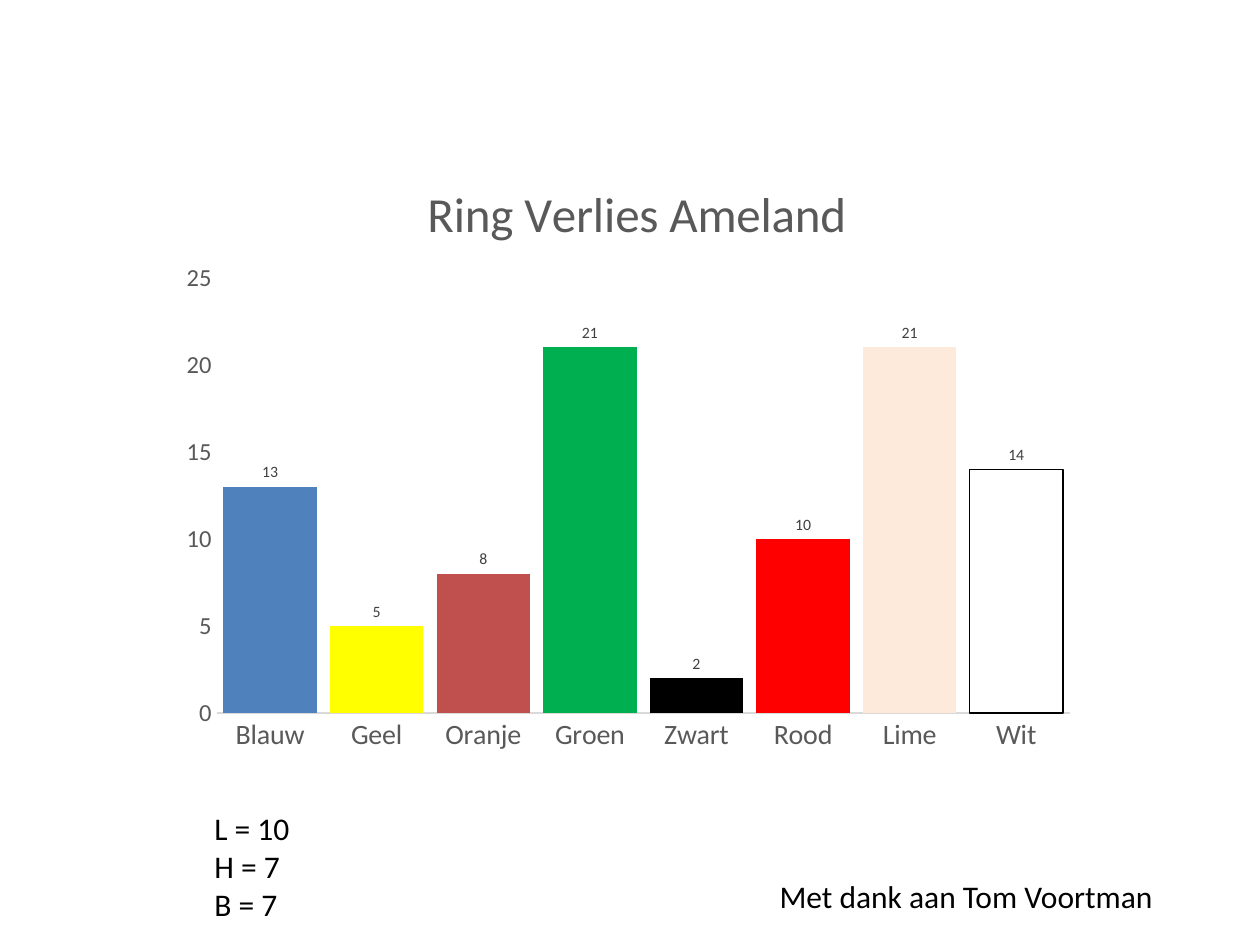
import pptx
import pptx.chart.data
import pptx.dml.color
import pptx.enum.chart
import pptx.enum.text
import pptx.oxml
import pptx.oxml.ns
import pptx.util

PX = pptx.util.Inches(1) / 126
FACE = "Calibri"
HUES = {
    "ink": "000000", "grey": "595959", "label": "404040", "axis": "D9D9D9",
    "Blauw": "4F81BD", "Geel": "FFFF00", "Oranje": "C0504D", "Groen": "00B050",
    "Zwart": "000000", "Rood": "FF0000", "Lime": "FDEADA", "Wit": "FFFFFF",
}
LOSS = {"Blauw": 13, "Geel": 5, "Oranje": 8, "Groen": 21,
        "Zwart": 2, "Rood": 10, "Lime": 21, "Wit": 14}
RGB = pptx.dml.color.RGBColor.from_string

deck = pptx.Presentation()
deck.slide_width = pptx.util.Inches(10)
deck.slide_height = pptx.util.Inches(7.5)
slide = deck.slides.add_slide(deck.slide_layouts[6])


def write(lines, box, size=18, hue="ink", align="LEFT"):
    """Add a text box with one paragraph per line; box is in px."""
    frame = slide.shapes.add_textbox(*[round(n * PX) for n in box]).text_frame
    frame.word_wrap = True
    frame.text = "\n".join(lines)
    for para in frame.paragraphs:
        para.alignment = getattr(pptx.enum.text.PP_ALIGN, align)
        style(para.font, size, hue)


def style(font, size, hue):
    font.name = FACE
    font.size = pptx.util.Pt(size)
    font.bold = False
    font.color.rgb = RGB(HUES[hue])


# Chart
data = pptx.chart.data.CategoryChartData()
data.categories = list(LOSS)
data.add_series("Series 1", list(LOSS.values()))
chart = slide.shapes.add_chart(
    pptx.enum.chart.XL_CHART_TYPE.COLUMN_CLUSTERED,
    *[round(n * PX) for n in (171, 141, 917, 622)], data).chart
style(chart.font, 10, "ink")
chart.has_legend = False
chart.has_title = True
title = chart.chart_title
title.text_frame.text = "Ring Verlies Ameland"
style(title.text_frame.paragraphs[0].runs[0].font, 28, "grey")

# Axes
for axis, size in ((chart.category_axis, 16), (chart.value_axis, 14)):
    style(axis.tick_labels.font, size, "grey")
    axis.major_tick_mark = pptx.enum.chart.XL_TICK_MARK.NONE
    axis.minor_tick_mark = pptx.enum.chart.XL_TICK_MARK.NONE
    axis.has_major_gridlines = False
base = chart.category_axis.format.line
base.color.rgb = RGB(HUES["axis"])
base.width = pptx.util.Pt(0.75)
chart.value_axis.format.line.fill.background()
chart.value_axis.minimum_scale = 0
chart.value_axis.maximum_scale = 25
chart.value_axis.major_unit = 5

# Bars, each in the colour of its ring
plot = chart.plots[0]
plot.gap_width = 14
plot.vary_by_categories = False
bars = plot.series[0]
bars.format.fill.solid()
bars.format.fill.fore_color.rgb = RGB(HUES["Blauw"])
for spot, name in enumerate(LOSS):
    fill = bars.points[spot].format.fill
    fill.solid()
    fill.fore_color.rgb = RGB(HUES[name])
edge = bars.points[len(LOSS) - 1].format.line
edge.color.rgb = RGB(HUES["ink"])
edge.width = pptx.util.Pt(0.75)
tags = bars.data_labels
tags.show_value = True
tags.position = pptx.enum.chart.XL_LABEL_POSITION.OUTSIDE_END
style(tags.font, 9, "label")

# Fixed places for the title and the inner plot area, as parts of the chart
area = chart.element.find(".//" + pptx.oxml.ns.qn("c:plotArea"))
head = title.element if hasattr(title, "element") else title._element
places = (
    (head, 1, {"xMode": "edge", "yMode": "edge", "x": 0.27, "y": 0.05}),
    (area, 0, {"layoutTarget": "inner", "xMode": "edge", "yMode": "edge",
               "x": 0.05, "y": 0.22, "w": 0.93, "h": 0.7}),
)
for part, spot, rules in places:
    for old in part.findall(pptx.oxml.ns.qn("c:layout")):
        part.remove(old)
    body = "".join(f'<c:{key} val="{val}"/>' for key, val in rules.items())
    part.insert(spot, pptx.oxml.parse_xml(
        f'<c:layout {pptx.oxml.ns.nsdecls("c")}>'
        f'<c:manualLayout>{body}</c:manualLayout></c:layout>'))

# Notes below the chart
write(["L = 10", "H = 7", "B = 7"], (202, 803, 111, 127))
write(["Met dank aan Tom Voortman"], (679, 871, 486, 50), align="RIGHT")

deck.save("out.pptx")
